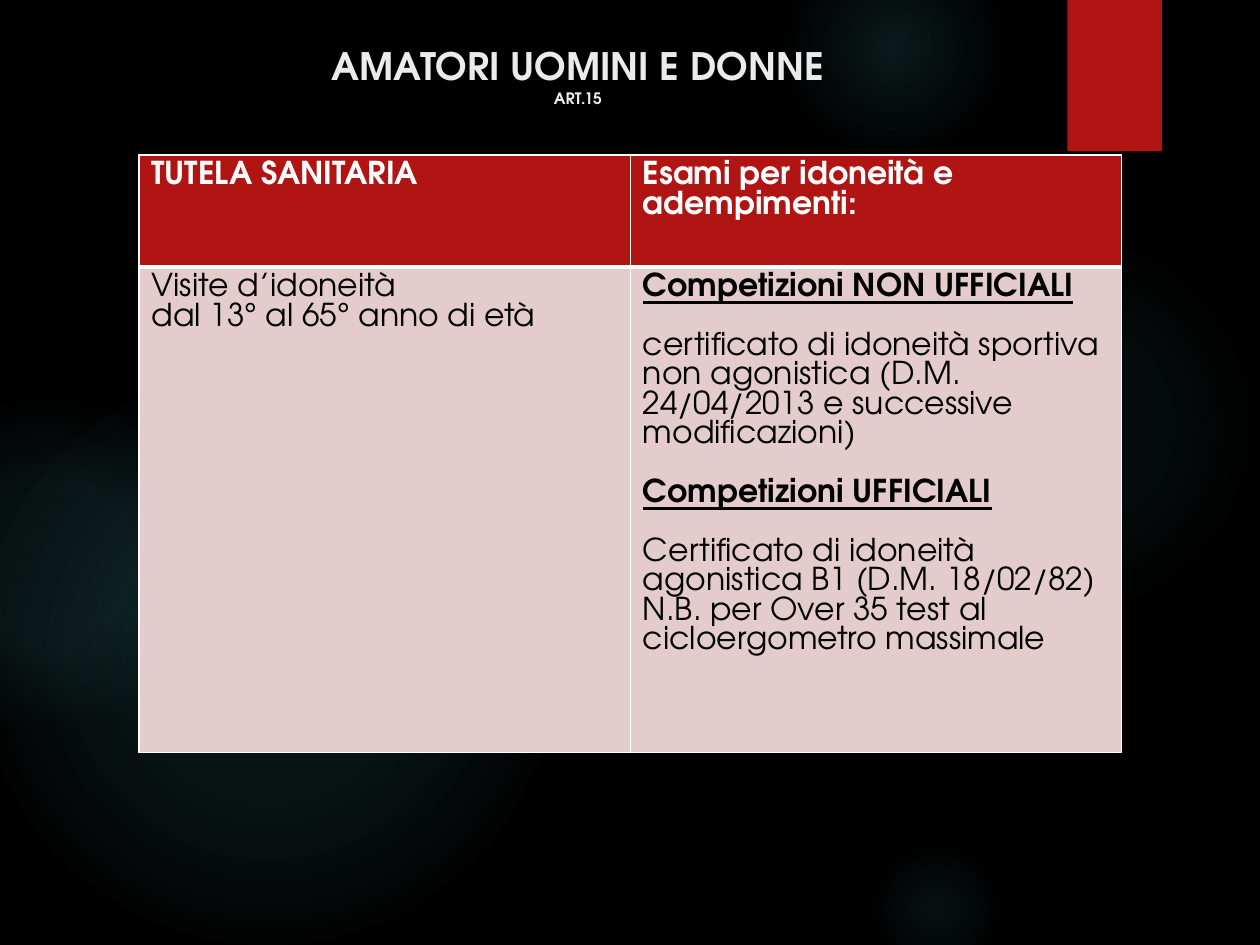
from lxml.etree import SubElement
from pptx import Presentation
from pptx.dml.color import RGBColor
from pptx.enum.shapes import MSO_SHAPE
from pptx.enum.text import MSO_ANCHOR, MSO_AUTO_SIZE, PP_ALIGN
from pptx.oxml import parse_xml
from pptx.oxml.ns import nsdecls, qn
from pptx.util import Pt

FONT = "TeX Gyre Adventor"
RED, PINK, WHITE, BLACK, GLOW = "B01513", "E4CCCC", "FFFFFF", "000000", "50B9C1"
LINE = 16.8

# left, top, diameter, then (position, opacity) stops in percent
GLOWS = [
    (496, 132, 222, [(0, 7), (36, 6), (69, 0)]),
    (448, -36, 126, [(0, 14), (36, 7), (73, 0)]),
    (496, 480, 78, [(0, 9), (36, 5), (66, 0)]),
    (-12, 210, 330, [(0, 11), (36, 10), (75, 0)]),
    (-66, 228, 186, [(0, 8), (36, 8), (72, 0)]),
]
HEADERS = ["TUTELA SANITARIA", "Esami per idoneità e adempimenti:"]
# text, heading, gap before
VISITS = [
    ("Visite d’idoneità", False, 0),
    ("dal 13° al 65° anno di età", False, 0),
]
EXAMS = [
    ("Competizioni NON UFFICIALI", True, 0),
    ("certificato di idoneità sportiva non agonistica "
     "(D.M. 24/04/2013 e successive modificazioni)", False, LINE),
    ("Competizioni UFFICIALI", True, LINE),
    ("Certificato di idoneità agonistica B1 (D.M. 18/02/82)", False, LINE),
    ("N.B. per Over 35 test al cicloergometro massimale", False, 0),
]


def rgb(color):
    return RGBColor.from_string(color)


def add_text(p, text, size=18, color=BLACK, bold=False, underline=False):
    r = p.add_run()
    r.text = text
    f = r.font
    f.name, f.size, f.bold, f.underline = FONT, Pt(size), bold, underline
    f.color.rgb = rgb(color)


def add_glow(s, x, y, size, stops):
    sp = s.shapes.add_shape(MSO_SHAPE.OVAL, Pt(x), Pt(y), Pt(size), Pt(size))
    sp.shadow.inherit = False
    sp.line.fill.background()
    gs = "".join(
        f'<a:gs pos="{pos * 1000}"><a:srgbClr val="{GLOW}">'
        f'<a:alpha val="{alpha * 1000}"/></a:srgbClr></a:gs>'
        for pos, alpha in stops)
    grad = parse_xml(
        f'<a:gradFill {nsdecls("a")}><a:gsLst>{gs}</a:gsLst><a:path path="circle">'
        '<a:fillToRect l="50000" t="50000" r="50000" b="50000"/></a:path></a:gradFill>')
    sp.element.spPr.find(qn("a:prstGeom")).addnext(grad)


def add_ribbon(s, x, y, w, h):
    sp = s.shapes.add_shape(MSO_SHAPE.RECTANGLE, Pt(x), Pt(y), Pt(w), Pt(h))
    sp.shadow.inherit = False
    sp.fill.solid()
    sp.fill.fore_color.rgb = rgb(RED)
    sp.line.fill.background()
    sp.element.spPr.find(qn("a:effectLst")).append(parse_xml(
        f'<a:outerShdw {nsdecls("a")} blurRad="{Pt(3)}" dist="{Pt(2)}" dir="5400000">'
        f'<a:srgbClr val="{BLACK}"><a:alpha val="45000"/></a:srgbClr></a:outerShdw>'))


def add_title(s, x, y, w, h):
    sp = s.shapes.title
    sp.left, sp.top, sp.width, sp.height = Pt(x), Pt(y), Pt(w), Pt(h)
    s.shapes.element.append(sp.element)  # in front of the glows
    tf = sp.text_frame
    tf.word_wrap, tf.auto_size = True, MSO_AUTO_SIZE.NONE
    tf.vertical_anchor = MSO_ANCHOR.TOP
    p = tf.paragraphs[0]
    p.alignment = PP_ALIGN.CENTER
    add_text(p, "AMATORI UOMINI E DONNE", 21.6, "EBEBEB", True)
    p.add_line_break()
    add_text(p, "ART.15", 9, "EBEBEB", True)


def format_cell(cell, fill, bottom=1):
    tcPr = cell._tc.get_or_add_tcPr()
    for side, width in (("L", 1), ("R", 1), ("T", 1), ("B", bottom)):
        ln = SubElement(tcPr, qn(f"a:ln{side}"), w=str(Pt(width)))
        SubElement(SubElement(ln, qn("a:solidFill")), qn("a:srgbClr"), val=WHITE)
    cell.fill.solid()
    cell.fill.fore_color.rgb = rgb(fill)


def add_paragraphs(tf, rows, **fmt):
    for i, (text, heading, gap) in enumerate(rows):
        p = tf.paragraphs[0] if i == 0 else tf.add_paragraph()
        p.line_spacing, p.space_before = Pt(LINE), Pt(gap)
        add_text(p, text, **{"bold": heading, "underline": heading, **fmt})


def add_exam_table(s, x, y, w, heights):
    tbl = s.shapes.add_table(2, 2, Pt(x), Pt(y), Pt(w), Pt(sum(heights))).table
    tbl.horz_banding = False
    for row, height in zip(tbl.rows, heights):
        row.height = Pt(height)
    for col, (header, body) in enumerate(zip(HEADERS, (VISITS, EXAMS))):
        top, bottom = tbl.cell(0, col), tbl.cell(1, col)
        format_cell(top, RED, bottom=3)
        add_paragraphs(top.text_frame, [(header, False, 0)], color=WHITE, bold=True)
        format_cell(bottom, PINK)
        add_paragraphs(bottom.text_frame, body)


def main():
    prs = Presentation()
    prs.slide_width, prs.slide_height = Pt(720), Pt(540)
    s = prs.slides.add_slide(prs.slide_layouts[5])
    s.background.fill.solid()
    s.background.fill.fore_color.rgb = rgb(BLACK)
    # Backdrop
    for glow in GLOWS:
        add_glow(s, *glow)
    add_ribbon(s, 610, 0, 54, 86.4)
    # Content
    add_title(s, 49.5, 21, 561.5, 67.5)
    add_exam_table(s, 79.4, 88.6, 561.6, (64, 277.4))
    prs.save("out.pptx")


if __name__ == "__main__":
    main()
